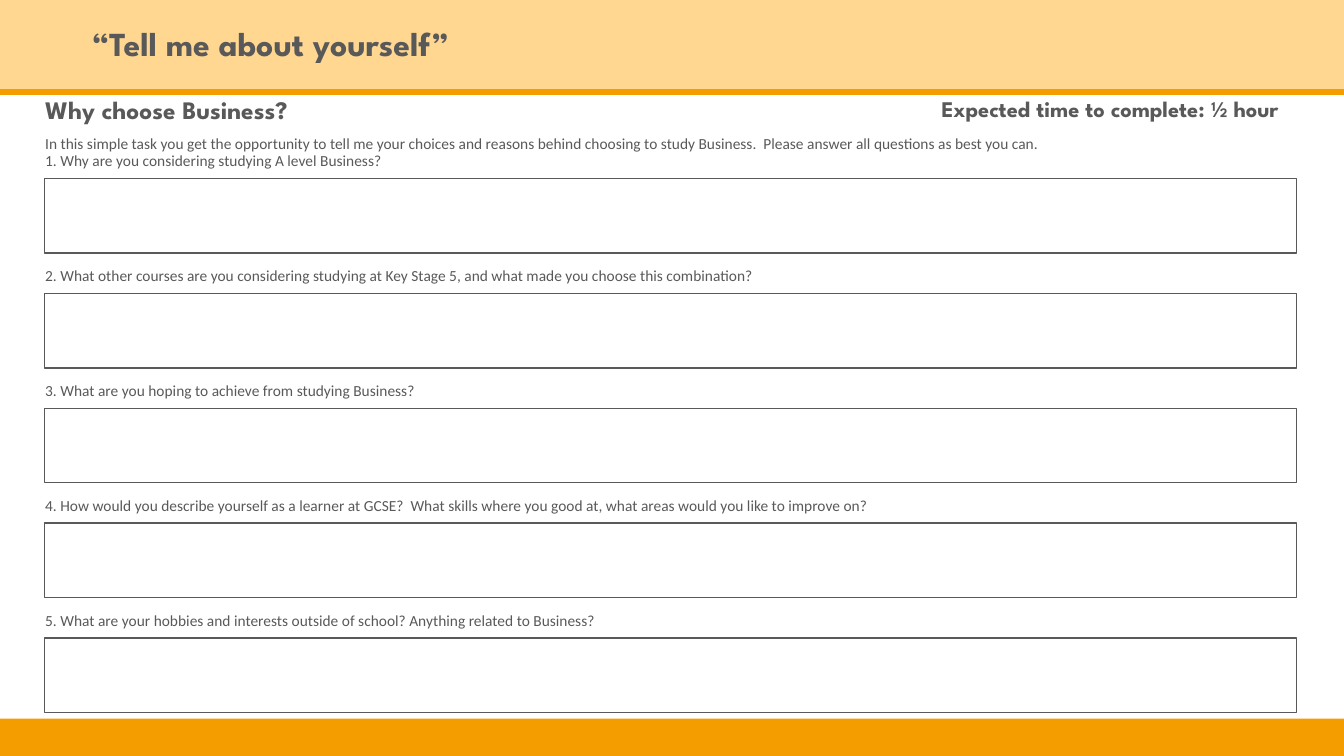
from pptx import Presentation
from pptx.dml.color import RGBColor
from pptx.enum.shapes import MSO_CONNECTOR, MSO_SHAPE
from pptx.enum.text import MSO_ANCHOR, MSO_AUTO_SIZE, PP_ALIGN
from pptx.oxml.ns import qn
from pptx.util import Inches, Pt
from lxml.etree import SubElement

COLORS = {"band": "FFD791", "accent": "F49D00", "text": "595959"}
HEADING_FONT, BODY_FONT = "League Spartan", "Calibri"
SLIDE_W, SLIDE_H = 13.33, 7.5
ROW_PITCH = 1.14

INTRO = ("In this simple task you get the opportunity to tell me your choices and reasons "
         "behind choosing to study Business.  Please answer all questions as best you can.")
QUESTIONS = [
    "1. Why are you considering studying A level Business?",
    "2. What other courses are you considering studying at Key Stage 5, "
    "and what made you choose this combination?",
    "3. What are you hoping to achieve from studying Business?",
    "4. How would you describe yourself as a learner at GCSE?  "
    "What skills where you good at, what areas would you like to improve on?",
    "5. What are your hobbies and interests outside of school? Anything related to Business?",
]


def color(name):
    return RGBColor.from_string(COLORS[name])


def set_attrs(obj, values):
    for name, value in values.items():
        setattr(obj, name, value)


def write_text(sp, text, size, font=BODY_FONT, bold=False, anchor=MSO_ANCHOR.TOP,
               wrap=True, auto_size=MSO_AUTO_SIZE.NONE, **spacing):
    tf = sp.text_frame
    set_attrs(tf, {"word_wrap": wrap, "auto_size": auto_size, "vertical_anchor": anchor})
    p = tf.paragraphs[0]
    set_attrs(p, {"alignment": PP_ALIGN.LEFT, **spacing})
    r = p.add_run()
    r.text = text
    set_attrs(r.font, {"name": font, "size": Pt(size), "bold": bold})
    r.font.color.rgb = color("text")


def add_text(shapes, box, text, size, **style):
    write_text(shapes.add_textbox(*map(Inches, box)), text, size, **style)


def add_rect(shapes, box, fill=None, line=None):
    sp = shapes.add_shape(MSO_SHAPE.RECTANGLE, *map(Inches, box))
    sp.shadow.inherit = False
    if fill:
        sp.fill.solid()
        sp.fill.fore_color.rgb = color(fill)
    else:
        sp.fill.background()
    if line:
        sp.line.color.rgb = color(line)
        sp.line.width = Pt(1)
    else:
        sp.line.fill.background()


def add_header(s, left, top, width, height):
    # Band and rule
    add_rect(s.shapes, (left, top, width, height), fill="band")
    bottom = top + height
    rule = s.shapes.add_connector(MSO_CONNECTOR.STRAIGHT, Inches(left), Inches(bottom),
                                  Inches(left + width), Inches(bottom))
    rule.line.color.rgb = color("accent")
    rule.line.width = Pt(4.5)
    SubElement(rule.element.spPr, qn("a:effectLst"))
    # Title, brought in front of the band
    title = s.shapes.title
    set_attrs(title, {"left": Inches(left + 0.81), "top": Inches(top + 0.09),
                      "width": Inches(10.31), "height": Inches(0.73)})
    write_text(title, "“Tell me about yourself”", 24, font=HEADING_FONT, bold=True,
               anchor=MSO_ANCHOR.MIDDLE, line_spacing=0.9)
    title.element.getparent().append(title.element)


def add_introduction(s, left, top):
    heading = {"font": HEADING_FONT, "bold": True, "line_spacing": 0.9}
    add_text(s.shapes, (left + 8.89, top + 0.03, 4.09, 0.4),
             "Expected time to complete: ½ hour", 16, space_before=Pt(10), **heading)
    add_text(s.shapes, (left, top, 4.17, 0.4), "Why choose Business?", 18,
             anchor=MSO_ANCHOR.MIDDLE, **heading)
    add_text(s.shapes, (left, top + 0.38, 10.08, 0.29), INTRO, 11, wrap=False,
             auto_size=MSO_AUTO_SIZE.SHAPE_TO_FIT_TEXT)


def add_question(s, left, top, width, question):
    shapes = s.shapes.add_group_shape().shapes
    add_rect(shapes, (left + 0.09, top + 0.32, width, 0.74), line="text")
    add_text(shapes, (left, top, 10.54, 0.29), question, 11,
             auto_size=MSO_AUTO_SIZE.SHAPE_TO_FIT_TEXT)


def main():
    prs = Presentation()
    prs.slide_width, prs.slide_height = Inches(SLIDE_W), Inches(SLIDE_H)
    s = prs.slides.add_slide(prs.slide_layouts[5])
    add_header(s, 0, 0, SLIDE_W, 0.91)
    add_introduction(s, 0.35, 0.9)
    for i, question in enumerate(QUESTIONS):
        add_question(s, 0.35, 1.45 + i * ROW_PITCH, 12.42, question)
    # Footer band
    add_rect(s.shapes, (0, 7.13, SLIDE_W, SLIDE_H - 7.13), fill="accent")
    prs.save("out.pptx")


if __name__ == "__main__":
    main()
